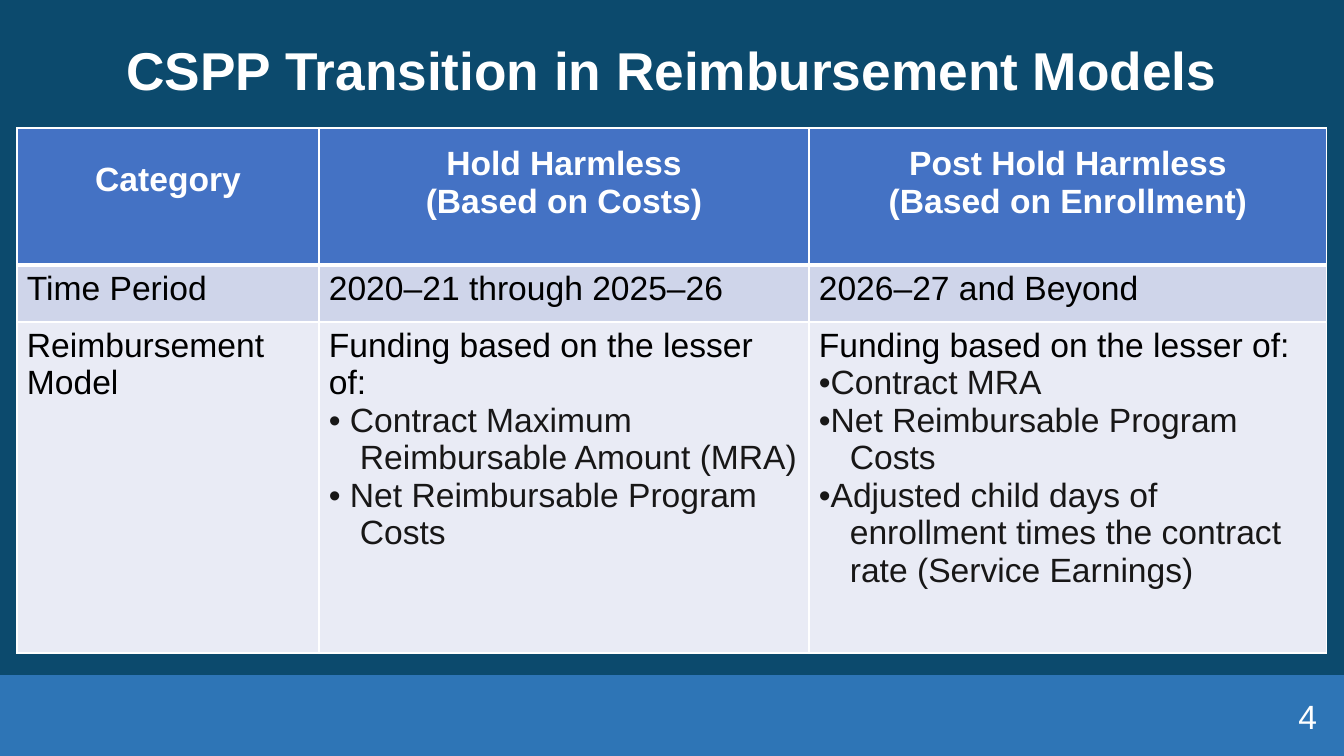
from lxml import etree
from pptx import Presentation, util as u
from pptx.dml.color import RGBColor
from pptx.enum import shapes, text
from pptx.oxml import ns

EMU_PER_PX = 914400 / 100.8
WHITE, BLACK, INK = "FFFFFF", "000000", "181717"
NAVY, BLUE, HEADER = "0C4A6D", "2E75B6", "4472C4"
BAND, PALE = "CFD5EA", "E9EBF5"
LEFT, CENTER, RIGHT = text.PP_ALIGN.LEFT, text.PP_ALIGN.CENTER, text.PP_ALIGN.RIGHT
TOP, MIDDLE = text.MSO_ANCHOR.TOP, text.MSO_ANCHOR.MIDDLE


def px(length):
    return u.Emu(round(length * EMU_PER_PX))


def color(value):
    return RGBColor.from_string(value)


def apply(target, values):
    for name, value in values.items():
        setattr(target, name, value)


class Deck:
    font = "Arial"

    def __init__(self, width, height, background):
        self.prs = Presentation()
        apply(self.prs, {"slide_width": px(width), "slide_height": px(height)})
        self.slide = self.prs.slides.add_slide(self.prs.slide_layouts[6])
        self.fill(self.slide.background, background)

    def fill(self, target, value):
        target.fill.solid()
        target.fill.fore_color.rgb = color(value)

    def band(self, box, value):
        band = self.slide.shapes.add_shape(
            shapes.MSO_SHAPE.RECTANGLE, *map(px, box))
        band.shadow.inherit = False
        self.fill(band, value)
        band.line.fill.background()

    def paragraphs(self, frame, lines, ink=WHITE, size=24, bold=False,
                   align=LEFT, spacing=1.0):
        frame.word_wrap = True
        for number, line in enumerate(lines):
            paragraph = frame.add_paragraph() if number else frame.paragraphs[0]
            apply(paragraph, {"alignment": align, "line_spacing": spacing})
            run = paragraph.add_run()
            run.text = line
            apply(run.font, {"name": self.font, "size": u.Pt(size), "bold": bold})
            listed = line.startswith("•")
            run.font.color.rgb = color(INK if listed else ink)
            if listed:
                properties = paragraph._p.get_or_add_pPr()
                properties.set("marL", str(px(31)))
                properties.set("indent", str(px(-31)))

    def text(self, box, line, **style):
        frame = self.slide.shapes.add_textbox(*map(px, box)).text_frame
        frame.vertical_anchor = MIDDLE
        self.paragraphs(frame, [line], **style)

    def borders(self, cell, widths):
        properties = cell._tc.get_or_add_tcPr()
        for position, (side, width) in enumerate(widths.items()):
            line = etree.Element(ns.qn(f"a:ln{side}"), w=str(u.Pt(width)))
            solid = etree.SubElement(line, ns.qn("a:solidFill"))
            etree.SubElement(solid, ns.qn("a:srgbClr"), val=WHITE)
            properties.insert(position, line)

    def table(self, origin, widths, heights, rows, fills):
        box = (*origin, sum(widths), sum(heights))
        grid = self.slide.shapes.add_table(
            len(rows), len(widths), *map(px, box)).table
        for column, width in zip(grid.columns, widths):
            column.width = px(width)
        for row, height in zip(grid.rows, heights):
            row.height = px(height)
        for r, (row, value) in enumerate(zip(rows, fills)):
            heading = r == 0
            for c, lines in enumerate(row):
                cell = grid.cell(r, c)
                self.fill(cell, value)
                self.borders(cell, {"L": 1, "R": 1, "T": 3 if r == 1 else 1,
                                    "B": 3 if heading else 1})
                apply(cell, {"vertical_anchor": MIDDLE if heading else TOP,
                             "margin_left": px(10), "margin_right": px(10),
                             "margin_top": px(5),
                             "margin_bottom": px((32 if c else 39) if heading else 5)})
                self.paragraphs(cell.text_frame, lines, bold=heading,
                                ink=WHITE if heading else BLACK,
                                align=CENTER if heading else LEFT)


def main():
    deck = Deck(1344, 756, NAVY)
    deck.band((0, 675, 1344, 81), BLUE)
    deck.text((17, 0, 1310, 146), "CSPP Transition in Reimbursement Models",
              size=38, bold=True, align=CENTER, spacing=0.9)
    lesser = "Funding based on the lesser of:"
    reimbursement_rows = [
        [["Category"],
         ["Hold Harmless", "(Based on Costs)"],
         ["Post Hold Harmless", "(Based on Enrollment)"]],
        [["Time Period"], ["2020–21 through 2025–26"], ["2026–27 and Beyond"]],
        [["Reimbursement Model"],
         [lesser,
          "• Contract Maximum Reimbursable Amount (MRA)",
          "• Net Reimbursable Program Costs"],
         [lesser,
          "•Contract MRA",
          "•Net Reimbursable Program Costs",
          "•Adjusted child days of enrollment times the contract rate "
          "(Service Earnings)"]],
    ]
    deck.table((17, 128), (302, 490, 518), (137, 57, 331),
               reimbursement_rows, (HEADER, BAND, PALE))
    deck.text((1025, 696, 302, 40), "4", align=RIGHT)
    deck.prs.save("out.pptx")


if __name__ == "__main__":
    main()
